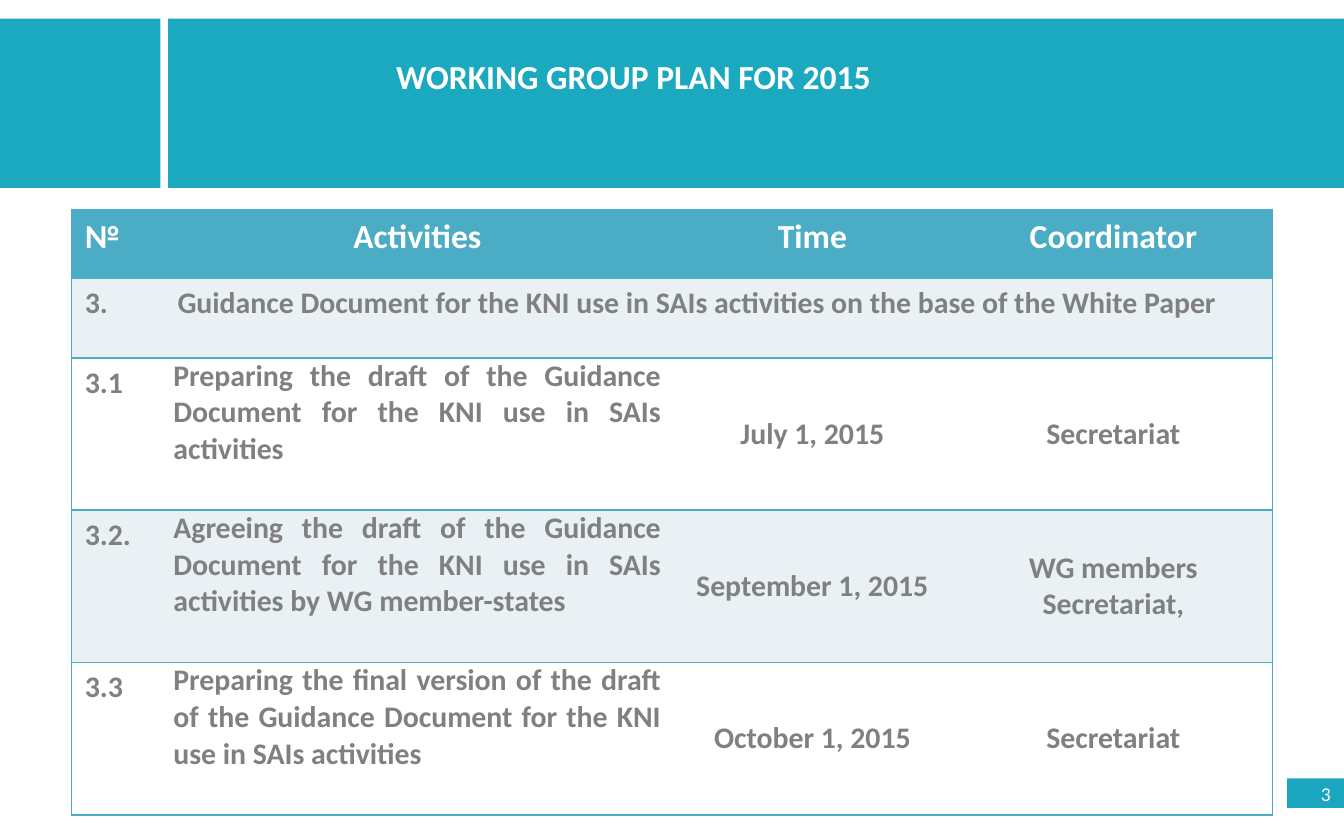
from pptx import Presentation
from pptx.dml.color import RGBColor
from pptx.enum.shapes import MSO_SHAPE
from pptx.enum.text import MSO_ANCHOR, PP_ALIGN
from pptx.oxml import parse_xml
from pptx.oxml.ns import nsdecls
from pptx.util import Pt

RECT = MSO_SHAPE.RECTANGLE
TOP, MIDDLE = MSO_ANCHOR.TOP, MSO_ANCHOR.MIDDLE
LEFT, CENTER, RIGHT, JUST = PP_ALIGN.LEFT, PP_ALIGN.CENTER, PP_ALIGN.RIGHT, PP_ALIGN.JUSTIFY
TEAL, BLUE, PALE, GRAY, WHITE = "1AA9BF", "4BACC6", "E9F1F5", "808080", "FFFFFF"


def color(code):
    return RGBColor.from_string(code)


def style(frame, size, code, bold, align):
    for para in frame.paragraphs:
        para.alignment = align
        for run in para.runs:
            font = run.font
            font.name = "Calibri"
            font.size = Pt(size)
            font.bold = bold
            font.color.rgb = color(code)


deck = Presentation()
deck.slide_width, deck.slide_height = Pt(720), Pt(450)
slide = deck.slides.add_slide(deck.slide_layouts[6])
shapes = slide.shapes

bars = [
    (90, 10, 630, 90.72, TEAL, ""),
    (0, 10, 86, 90.72, TEAL, ""),
    (689.5, 417, 30.5, 15.8, "1CA6C0", "3"),
]
for left, top, width, height, fill, text in bars:
    bar = shapes.add_shape(RECT, Pt(left), Pt(top), Pt(width), Pt(height))
    bar.shadow.inherit = False
    bar.fill.solid()
    bar.fill.fore_color.rgb = color(fill)
    bar.line.fill.background()
    if text:
        frame = bar.text_frame
        frame.text = text
        frame.vertical_anchor = MIDDLE
        style(frame, 10.5, WHITE, False, RIGHT)

title = shapes.add_textbox(Pt(205.2), Pt(26.6), Pt(271.4), Pt(29)).text_frame
title.text = "WORKING GROUP PLAN FOR 2015"
title.word_wrap = False
style(title, 18, WHITE, True, LEFT)

rows = [
    ["№", "Activities", "Time", "Coordinator"],
    ["3.", "Guidance Document for the KNI use in SAIs activities on the base of the White Paper", "", ""],
    ["3.1", "Preparing the draft of the Guidance Document for the KNI use in SAIs activities",
     "July 1, 2015", "Secretariat"],
    ["3.2.", "Agreeing the draft of the Guidance Document for the KNI use in SAIs activities by WG member-states",
     "September 1, 2015", "WG members Secretariat,"],
    ["3.3", "Preparing the final version of the draft of the Guidance Document for the KNI use in SAIs activities",
     "October 1, 2015", "Secretariat"],
]
widths = [49.7, 271.4, 151.9, 170.6]
heights = [36.9, 42.7] + [81.6] * 3
grid = shapes.add_table(5, 4, Pt(38.2), Pt(112.2), Pt(sum(widths)), Pt(sum(heights))).table
for col, width in zip(grid.columns, widths):
    col.width = Pt(width)
for row, height in zip(grid.rows, heights):
    row.height = Pt(height)
grid.cell(1, 1).merge(grid.cell(1, 3))

for r, texts in enumerate(rows):
    for c, text in enumerate(texts):
        cell = grid.cell(r, c)
        inner = r > 1 and c > 0
        if inner:
            cell.margin_left = cell.margin_right = Pt(5)
            cell.margin_top = cell.margin_bottom = 0
        cell.vertical_anchor = MIDDLE if inner and c > 1 else TOP
        props = cell._tc.get_or_add_tcPr()
        for side in "LRTB":
            drawn = side in "TB" or (side == "L" and c == 0) or (side == "R" and (c == 3 or (r, c) == (1, 1)))
            paint = f'<a:solidFill><a:srgbClr val="{BLUE}"/></a:solidFill>' if drawn else "<a:noFill/>"
            props.append(parse_xml(f'<a:ln{side} {nsdecls("a")} w="12700">{paint}</a:ln{side}>'))
        cell.fill.solid()
        cell.fill.fore_color.rgb = color(BLUE if r == 0 else PALE if r % 2 else WHITE)
        if text:
            cell.text_frame.text = text
            align = LEFT if c == 0 or r == 1 else JUST if inner and c == 1 else CENTER
            style(cell.text_frame, 16 if r else 18, GRAY if r else WHITE, True, align)

deck.save("out.pptx")
